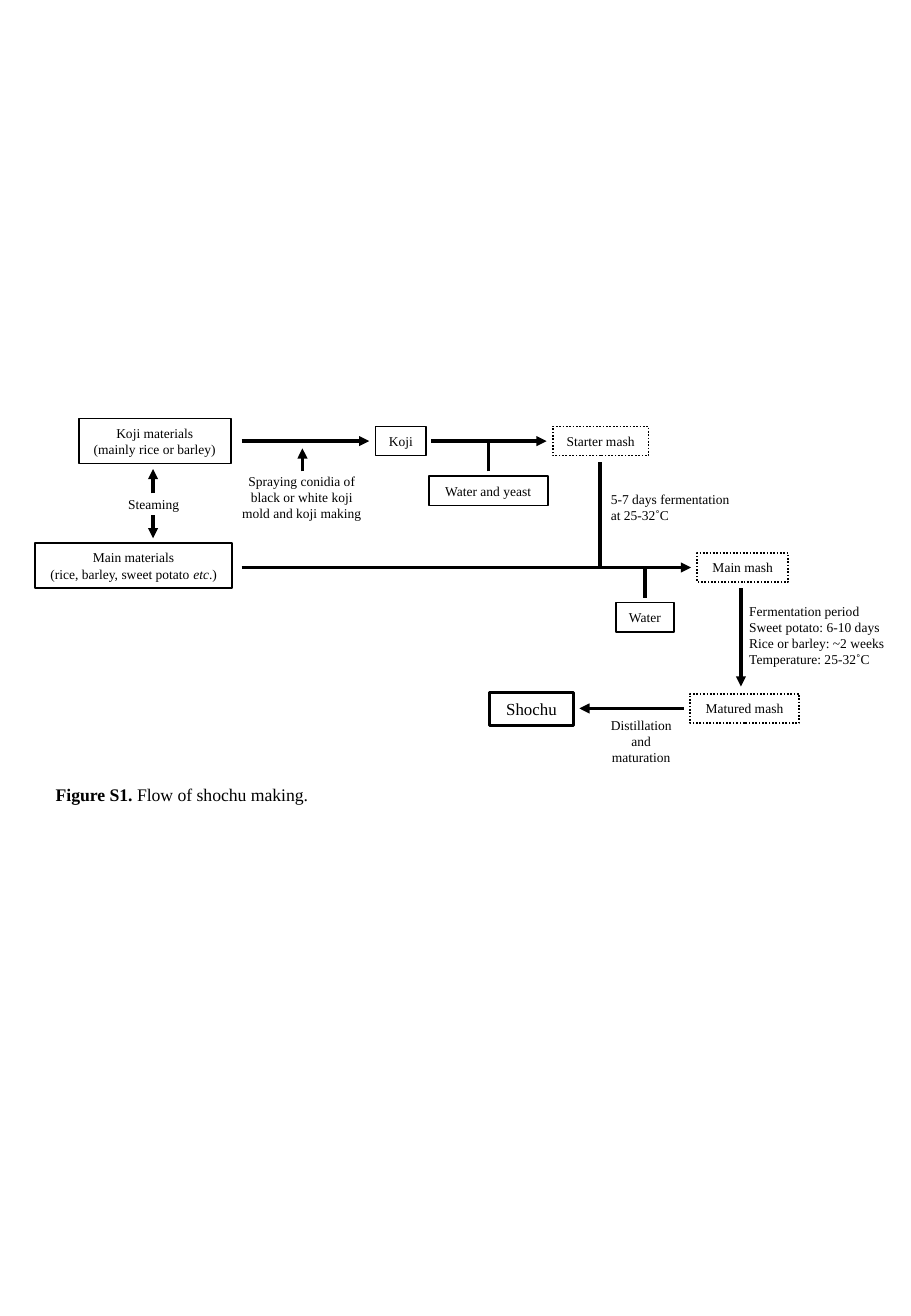
import pptx
import pptx.util
import pptx.dml.color
import pptx.enum.dml
import pptx.enum.shapes
import pptx.enum.text
import pptx.oxml
import pptx.oxml.ns
from dataclasses import dataclass


@dataclass(frozen=True)
class Theme:
    font: str = "Times New Roman"
    ink: str = "000000"
    body: float = 8
    goal: float = 10
    note: float = 10.5
    thin: float = 1
    bold: float = 1.5
    flow: float = 2


theme = Theme()
WIDE, HIGH = 7.5, 10.83
COLS, ROWS = 75, 108.3

# Rows and columns that the flow runs along
KOJI, MAIN, LAST = 36.3, 46.7, 58.3
LEFT, MID, RIGHT = 12.6, 49.4, 61.0
LINE = 2.4

# Boxes: lines, centre column, centre row, width, height; |...| is italic
solid = [
    (["Koji materials", "(mainly rice or barley)"], 12.75, KOJI, 12.5, 3.7),
    (["Main materials", "(rice, barley, sweet potato |etc|.)"],
     11, 46.55, 16.2, 3.7),
    (["Koji"], 33, KOJI, 4.2, LINE),
    (["Water and yeast"], 40.2, 40.4, 9.8, LINE),
    (["Water"], 53.1, 50.8, 4.8, LINE),
]
dotted = [
    (["Starter mash"], 49.45, KOJI, 7.9, LINE),
    (["Main mash"], 61.15, MAIN, 7.5, LINE),
    (["Matured mash"], 61.3, LAST, 9, LINE),
]
goal = (["Shochu"], 43.75, 58.35, 6.9, 2.7)

# Notes beside the flow: lines, centre column, centre row, width, height
centred = [
    (["Steaming"], 12.65, 41.2, 8.5, 1.8),
    (["Spraying conidia of black or white koji mold and koji making"],
     24.85, 40.9, 12.5, 5),
    (["Distillation", "and", "maturation"], 52.8, 61, 7.6, 5),
]
ragged = [
    (["5-7 days fermentation", "at 25-32˚C"], 55.4, 41.75, 12.2, 3.7),
    (["Fermentation period", "Sweet potato: 6-10 days",
      "Rice or barley: ~2 weeks", "Temperature: 25-32˚C"],
     67.7, 52.3, 14, 6.4),
]
caption = (["|Figure S1.| Flow of shochu making."], 15.15, 65.4, 23.1, 2.8)

# Lines: start column, start row, end column, end row
arrows = [
    (LEFT, 40.6, LEFT, 38.6),
    (LEFT, 42.4, LEFT, 44.3),
    (19.9, KOJI, 30.4, KOJI),
    (24.9, 38.8, 24.9, 36.9),
    (35.5, KOJI, 45, KOJI),
    (19.9, MAIN, 56.9, MAIN),
    (RIGHT, 48.4, RIGHT, 56.5),
    (56.3, LAST, 47.7, LAST),
]
joins = [
    (40.2, 38.8, 40.2, 36.4),
    (MID, MAIN, MID, 38),
    (53.1, 49.2, 53.1, 46.8),
]

Align = pptx.enum.text.PP_ALIGN
Dash = pptx.enum.dml.MSO_LINE
ink = pptx.dml.color.RGBColor.from_string(theme.ink)

deck = pptx.Presentation()
deck.slide_width = pptx.util.Inches(WIDE)
deck.slide_height = pptx.util.Inches(HIGH)
slide = deck.slides.add_slide(deck.slide_layouts[6])


def col(n):
    return round(deck.slide_width * n / COLS)


def row(n):
    return round(deck.slide_height * n / ROWS)


def place(x, y, w, h):
    return col(x - w / 2), row(y - h / 2), col(w), row(h)


def write(shape, lines, size, align, style="italic", wrap=True):
    frame = shape.text_frame
    frame.word_wrap = wrap
    frame.auto_size = pptx.enum.text.MSO_AUTO_SIZE.SHAPE_TO_FIT_TEXT
    frame.text = "\n".join(line.replace("|", "") for line in lines)
    for line, para in zip(lines, frame.paragraphs):
        para.alignment = align
        if "|" in line:
            para.clear()
            for i, part in enumerate(line.split("|")):
                if part:
                    run = para.add_run()
                    run.text = part
                    setattr(run.font, style, i % 2 == 1)
        for run in para.runs:
            run.font.name = theme.font
            run.font.size = pptx.util.Pt(size)
            run.font.color.rgb = ink


def box(lines, *spot, size=theme.body, width=theme.thin, dash=None):
    shape = slide.shapes.add_shape(
        pptx.enum.shapes.MSO_SHAPE.RECTANGLE, *place(*spot))
    shape.shadow.inherit = False
    shape.fill.background()
    shape.line.color.rgb = ink
    shape.line.width = pptx.util.Pt(width)
    if dash:
        shape.line.dash_style = dash
    write(shape, lines, size, Align.CENTER)


def note(lines, *spot, size=theme.body, align=Align.CENTER, **look):
    shape = slide.shapes.add_textbox(*place(*spot))
    write(shape, lines, size, align, **look)


def link(x1, y1, x2, y2, tip=False):
    line = slide.shapes.add_connector(
        pptx.enum.shapes.MSO_CONNECTOR.STRAIGHT,
        col(x1), row(y1), col(x2), row(y2))
    line.line.color.rgb = ink
    line.line.width = pptx.util.Pt(theme.flow)
    if tip:
        end = pptx.oxml.parse_xml(
            "<a:tailEnd %s type='triangle'/>" % pptx.oxml.ns.nsdecls("a"))
        line.line._get_or_add_ln().append(end)
    line._element.spPr.append(pptx.oxml.parse_xml(
        "<a:effectLst %s/>" % pptx.oxml.ns.nsdecls("a")))


# Flow lines
for spot in arrows:
    link(*spot, tip=True)
for spot in joins:
    link(*spot)

# Materials and products
for item in solid:
    box(*item)
for item in dotted:
    box(*item, dash=Dash.ROUND_DOT)
box(*goal, size=theme.goal, width=theme.bold)

# Notes and caption
for item in centred:
    note(*item)
for item in ragged:
    note(*item, align=Align.LEFT)
note(*caption, size=theme.note, align=Align.JUSTIFY, style="bold", wrap=False)

deck.save("out.pptx")
